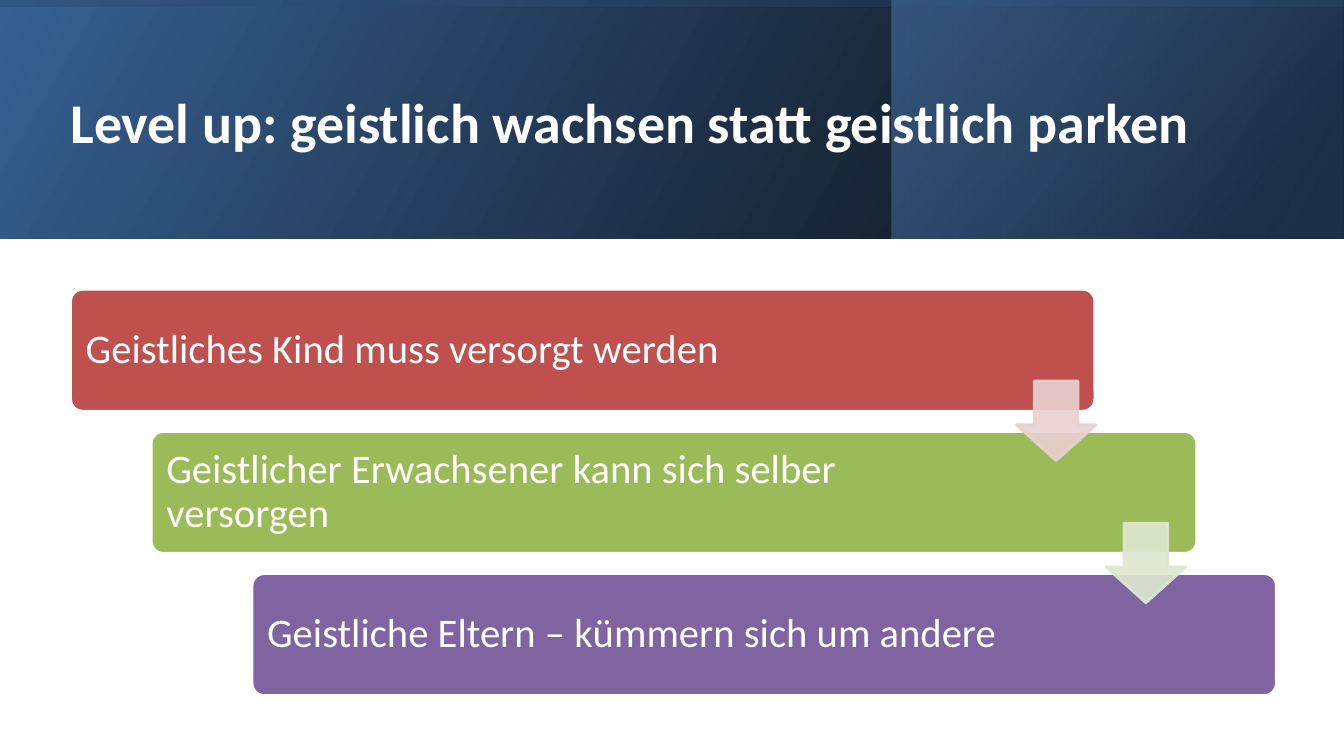
from dataclasses import dataclass

from lxml.etree import SubElement
from pptx import Presentation
from pptx.dml.color import RGBColor
from pptx.enum.shapes import MSO_SHAPE
from pptx.enum.text import MSO_ANCHOR
from pptx.oxml.ns import qn
from pptx.shapes.autoshape import Shape
from pptx.slide import Slide
from pptx.util import Inches, Pt

COLORS = {
    "white": "FFFFFF",
    "black": "000000",
    "blue": "376092",
    "navy": "254061",
    "sky": "4F81BD",
    "red": "C0504D",
    "green": "9BBB59",
    "purple": "8064A2",
    "pale_red": "E8D0D0",
    "pale_green": "DEE7D1",
}
FONT = "Calibri"
FIRST_TOP, ROW_PITCH, ROW_HEIGHT = 2.87, 1.41, 1.21
TEXT_OFFSET = 0.03
ARROW_OFFSET, ARROW_SIZE = 0.91, 0.79


@dataclass(frozen=True)
class Stop:
    position: float
    color: str
    opacity: int


@dataclass(frozen=True)
class Band:
    left: float
    top: float
    width: float
    height: float
    rotation: int
    angle: int
    stops: tuple[Stop, Stop]


@dataclass(frozen=True)
class Step:
    text: str
    left: float
    width: float
    text_width: float
    color: str


@dataclass(frozen=True)
class Arrow:
    left: float
    color: str


BANDS = [
    Band(0, 0, 13.33, 2.37, 0, 30,
         (Stop(0, "black", 96), Stop(1, "blue", 100))),
    Band(8.84, 0, 4.48, 2.37, 0, 40,
         (Stop(0.19, "navy", 68), Stop(1, "sky", 48))),
    Band(5.48, -5.48, 2.37, 13.33, 270, 10,
         (Stop(0.23, "blue", 16), Stop(0.99, "black", 45))),
]
STEPS = [
    Step("Geistliches Kind muss versorgt werden", 0.7, 10.16, 8.85, "red"),
    Step("Geistlicher Erwachsener kann sich selber versorgen",
         1.5, 10.37, 8.58, "green"),
    Step("Geistliche Eltern – kümmern sich um andere",
         2.5, 10.16, 8.4, "purple"),
]
ARROWS = [Arrow(10.08, "pale_red"), Arrow(10.97, "pale_green")]


def rgb(name: str) -> RGBColor:
    return RGBColor.from_string(COLORS[name])


def set_opacity(shape: Shape, percents: list[int]) -> None:
    colors = list(shape._element.spPr.iter(qn("a:srgbClr")))
    for color, percent in zip(colors, percents):
        if percent < 100:
            SubElement(color, qn("a:alpha")).set("val", str(percent * 1000))


def add_band(page: Slide, band: Band) -> None:
    shape = page.shapes.add_shape(
        MSO_SHAPE.RECTANGLE, Inches(band.left), Inches(band.top),
        Inches(band.width), Inches(band.height))
    shape.shadow.inherit = False
    shape.line.fill.background()
    shape.rotation = band.rotation
    shape._element.spPr.xfrm.set("flipH", "1")
    shape.fill.gradient()
    shape.fill.gradient_angle = band.angle
    for target, stop in zip(shape.fill.gradient_stops, band.stops):
        target.position = stop.position
        target.color.rgb = rgb(stop.color)
    set_opacity(shape, [stop.opacity for stop in band.stops])


def add_solid(page: Slide, kind: MSO_SHAPE, left: float, top: float,
              width: float, height: float, fill: str, line: str,
              adjustments: list[float]) -> Shape:
    shape = page.shapes.add_shape(
        kind, Inches(left), Inches(top), Inches(width), Inches(height))
    shape.shadow.inherit = False
    shape.fill.solid()
    shape.fill.fore_color.rgb = rgb(fill)
    shape.line.color.rgb = rgb(line)
    shape.line.width = Pt(2)
    for index, value in enumerate(adjustments):
        shape.adjustments[index] = value
    return shape


def add_text(page: Slide, text: str, left: float, top: float, width: float,
             height: float, size: int, inset: float, bold: bool) -> None:
    box = page.shapes.add_textbox(
        Inches(left), Inches(top), Inches(width), Inches(height))
    frame = box.text_frame
    frame.word_wrap = True
    frame.vertical_anchor = MSO_ANCHOR.MIDDLE
    frame.margin_left = frame.margin_right = Inches(inset)
    frame.margin_top = frame.margin_bottom = Inches(inset)
    para = frame.paragraphs[0]
    para.text = text
    para.line_spacing = 0.9
    para.font.name = FONT
    para.font.size = Pt(size)
    para.font.bold = bold
    para.font.color.rgb = rgb("white")


def add_step(page: Slide, step: Step, top: float) -> None:
    add_solid(page, MSO_SHAPE.ROUNDED_RECTANGLE, step.left, top, step.width,
              ROW_HEIGHT, step.color, "white", [0.1])
    add_text(page, step.text, step.left + TEXT_OFFSET, top + TEXT_OFFSET,
             step.text_width, ROW_HEIGHT - 2 * TEXT_OFFSET, 29, 0.12, False)


def add_arrow(page: Slide, arrow: Arrow, top: float) -> None:
    shape = add_solid(page, MSO_SHAPE.DOWN_ARROW, arrow.left, top, ARROW_SIZE,
                      ARROW_SIZE, arrow.color, arrow.color, [0.55, 0.45])
    set_opacity(shape, [90, 90])


def main() -> None:
    deck = Presentation()
    deck.slide_width, deck.slide_height = Inches(13.33), Inches(7.5)
    page = deck.slides.add_slide(deck.slide_layouts[6])
    for band in BANDS:
        add_band(page, band)
    add_text(page, "Level up: geistlich wachsen statt geistlich parken",
             0.6, 0.38, 11.54, 1.72, 40, 0.1, True)
    for row, step in enumerate(STEPS):
        add_step(page, step, FIRST_TOP + row * ROW_PITCH)
    for row, arrow in enumerate(ARROWS):
        add_arrow(page, arrow, FIRST_TOP + row * ROW_PITCH + ARROW_OFFSET)
    deck.save("out.pptx")


if __name__ == "__main__":
    main()
